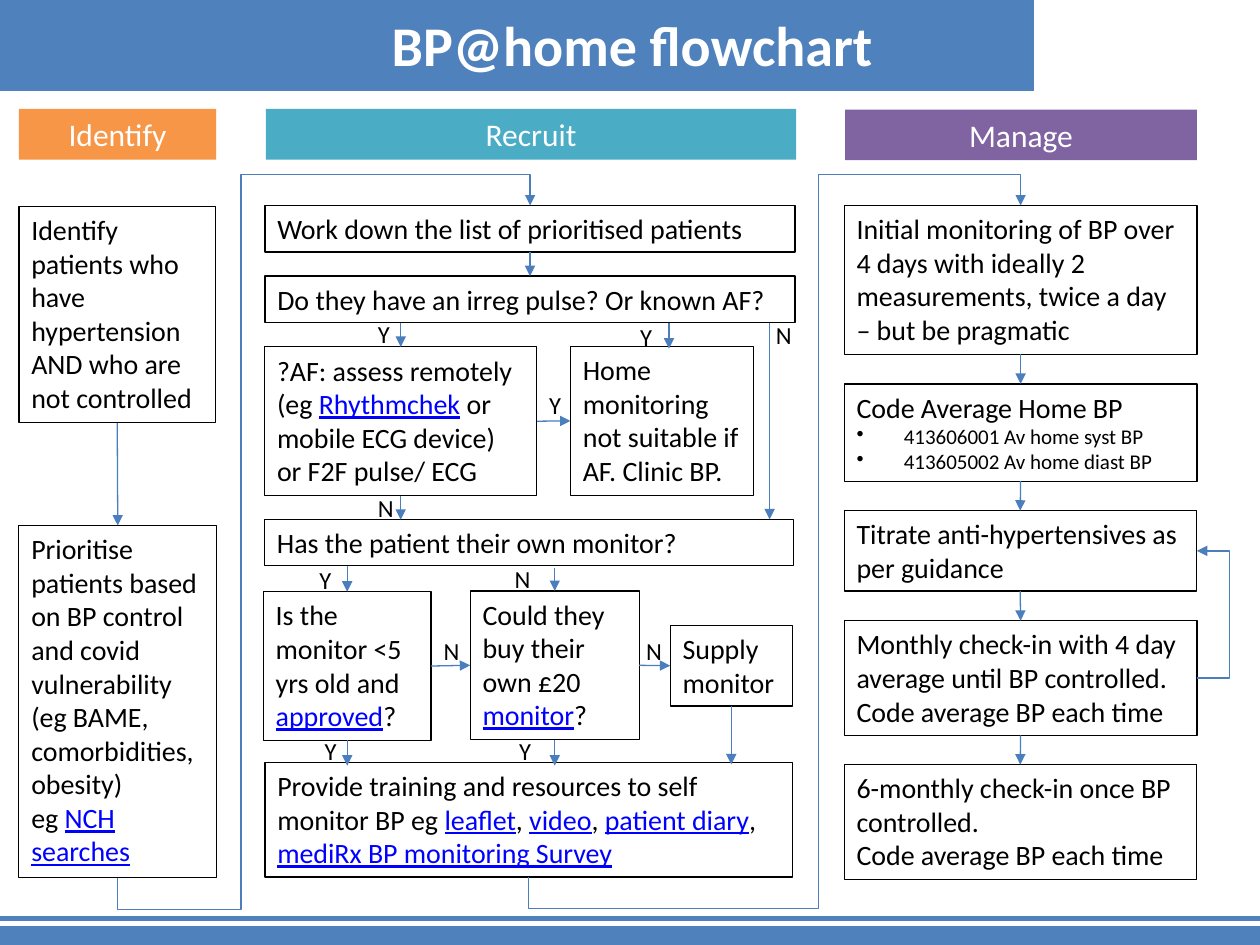
from lxml import etree
from pptx import Presentation
from pptx import util as u
from pptx.dml import color
from pptx.enum import shapes, text
from pptx.oxml import ns

Pt = u.Pt
BLUE, ARROW, BLACK, WHITE, LINK = "4F81BD", "4B7EBC", "000000", "FFFFFF", "0000FF"
rgb = color.RGBColor.from_string


def add_box(place, content, size, ink=BLACK, fill=None, line=None, weight=0.75):
    """Rectangle with text; newlines part paragraphs, and |bars| enclose link words."""
    box = page.shapes.add_shape(shapes.MSO_SHAPE.RECTANGLE, *map(Pt, place))
    box.shadow.inherit = False
    if fill:
        box.fill.solid()
        box.fill.fore_color.rgb = rgb(fill)
    else:
        box.fill.background()
    if line:
        box.line.color.rgb = rgb(line)
        box.line.width = Pt(weight)
    else:
        box.line.fill.background()
    frame = box.text_frame
    frame.word_wrap = True
    frame.vertical_anchor = text.MSO_ANCHOR.TOP
    for number, words in enumerate(content.split("\n")):
        para = frame.add_paragraph() if number else frame.paragraphs[0]
        para.alignment = text.PP_ALIGN.LEFT
        para.font.size = Pt(size)
        para.font.name = "Calibri"
        para.font.color.rgb = rgb(ink)
        for index, part in enumerate(words.split("|")):
            if part:
                span = para.add_run()
                span.text = part
                if index % 2:
                    span.font.color.rgb = rgb(LINK)
                    span.font.underline = True
    return box


def style_line(line, ink=ARROW, weight=0.75, arrow=True):
    line.line.color.rgb = rgb(ink)
    line.line.width = Pt(weight)
    properties = line._element.spPr
    if arrow:
        etree.SubElement(properties.find(ns.qn("a:ln")), ns.qn("a:tailEnd"), type="triangle")
    etree.SubElement(properties, ns.qn("a:effectLst"))


deck = Presentation()
deck.slide_width, deck.slide_height = Pt(720), Pt(540)
page = deck.slides.add_slide(deck.slide_layouts[6])
STRAIGHT = shapes.MSO_CONNECTOR.STRAIGHT

# Banner and footer
rule = page.shapes.add_connector(STRAIGHT, Pt(-1.5), Pt(525), Pt(720), Pt(525))
style_line(rule, BLUE, 3, arrow=False)
for place, fill in [((0, 530, 720, 10), BLUE), ((0, 0, 720, 51), BLUE), ((592, 0, 128, 51.8), WHITE)]:
    add_box(place, "", 16, fill=fill, line=fill, weight=2)
title = add_box((37.4, -0.7, 648, 51.8), "BP@home flowchart", 32, WHITE)
title.text_frame.vertical_anchor = text.MSO_ANCHOR.MIDDLE
title.text_frame.paragraphs[0].alignment = text.PP_ALIGN.CENTER
title.text_frame.paragraphs[0].font.bold = True

# Column headings
for name, left, top, width, fill in [
    ("Identify", 10.8, 62.2, 112.8, "F79646"),
    ("Recruit", 152, 62.2, 303, "4BACC6"),
    ("Manage", 482.9, 62.6, 201, "8064A2"),
]:
    heading = add_box((left, top, width, 29), name, 18, WHITE, fill)
    heading.text_frame.paragraphs[0].alignment = text.PP_ALIGN.CENTER

# Steps: left, top, width, height, wording
steps = {
    "identify": (10.8, 118, 112.4, 123.6,
                 "Identify patients who have hypertension AND who are not controlled"),
    "prioritise": (10.8, 300.3, 113, 201,
                   "Prioritise patients based on BP control and covid vulnerability "
                   "(eg BAME, comorbidities, obesity)\neg |NCH searches|"),
    "list": (151.4, 117.4, 303, 26.6, "Work down the list of prioritised patients"),
    "pulse": (151.4, 157.8, 303, 26.6, "Do they have an irreg pulse? Or known AF?"),
    "assess": (151.2, 198.2, 155.6, 85,
               "?AF: assess remotely (eg |Rhythmchek| or mobile ECG device) or F2F pulse/ ECG"),
    "clinic": (326, 198, 104.6, 85, "Home monitoring not suitable if AF. Clinic BP."),
    "own": (151.2, 296.8, 302.4, 26.6, "Has the patient their own monitor?"),
    "age": (150.5, 338.1, 95.8, 85, "Is the monitor <5 yrs old and |approved|?"),
    "buy": (268.7, 337.7, 96.6, 85, "Could they buy their own £20 |monitor|?"),
    "supply": (383, 357.4, 69.8, 46, "Supply monitor"),
    "train": (151.4, 435.6, 301.6, 65.5,
              "Provide training and resources to self monitor BP eg |leaflet|, |video|, "
              "|patient diary|, |mediRx BP monitoring Survey|"),
    "initial": (482.4, 117.4, 201.6, 85,
                "Initial monitoring of BP over\n"
                "4 days with ideally 2 measurements, twice a day – but be pragmatic"),
    "code": (482.4, 219.4, 201.6, 55.6,
             "Code Average Home BP\n413606001 Av home syst BP\n413605002 Av home diast BP"),
    "titrate": (482.4, 291.8, 201.2, 46, "Titrate anti-hypertensives as per guidance"),
    "monthly": (482.4, 354.7, 201.6, 65.5,
                "Monthly check-in with 4 day average until BP controlled. "
                "Code average BP each time"),
    "half_year": (482.4, 436.9, 201.2, 65.5,
                  "6-monthly check-in once BP controlled.\nCode average BP each time"),
}
boxes = {}
for name, (*place, words) in steps.items():
    boxes[name] = add_box(place, words, 16, line=BLACK)
    boxes[name].text_frame.auto_size = text.MSO_AUTO_SIZE.SHAPE_TO_FIT_TEXT

for para in boxes["code"].text_frame.paragraphs[1:]:
    para.font.size = Pt(12)
    layout = para._p.get_or_add_pPr()
    layout.set("marL", str(Pt(27)))
    layout.set("indent", str(Pt(-27)))
    bullet = etree.Element(ns.qn("a:buChar"), char="•")
    layout.find(ns.qn("a:defRPr")).addprevious(bullet)

# Arrows from the middle of one box to the middle of the next
BOTTOM_TO_TOP, RIGHT_TO_LEFT = (2, 0), (3, 1)
for chain, (leave, arrive) in [
    (("identify", "prioritise"), BOTTOM_TO_TOP),
    (("list", "pulse"), BOTTOM_TO_TOP),
    (("initial", "code", "titrate", "monthly", "half_year"), BOTTOM_TO_TOP),
    (("assess", "clinic"), RIGHT_TO_LEFT),
    (("age", "buy", "supply"), RIGHT_TO_LEFT),
]:
    for start, end in zip(chain, chain[1:]):
        arrow = page.shapes.add_connector(STRAIGHT, 0, 0, 0, 0)
        arrow.begin_connect(boxes[start], leave)
        arrow.end_connect(boxes[end], arrive)
        style_line(arrow)

# Vertical arrows joined to a box at one end at most
for x, top, bottom, above, below in [
    (229, 184.8, 198.2, None, "assess"),
    (382.3, 184.8, 199.2, None, None),
    (439.8, 184.4, 296.8, None, None),
    (229, 283.2, 297, "assess", None),
    (198.4, 323.4, 338.1, None, "age"),
    (317, 324.6, 337.7, None, "buy"),
    (198.4, 423.1, 437.5, "age", None),
    (317, 422.7, 437.5, "buy", None),
    (417.9, 403.4, 436.8, "supply", None),
]:
    arrow = page.shapes.add_connector(STRAIGHT, Pt(x), Pt(top), Pt(x), Pt(bottom))
    if above:
        arrow.begin_connect(boxes[above], 2)
    if below:
        arrow.end_connect(boxes[below], 0)
    style_line(arrow)

# Bent arrows between columns, and the titration loop
for start, *bends in [
    [(67.2, 501.5), (67.2, 519.6), (137.7, 519.6), (137.7, 99.6), (302.9, 99.6), (302.9, 117.4)],
    [(302.2, 501.2), (302.2, 519.2), (467.7, 519.2), (467.7, 99.6), (583.2, 99.6), (583.2, 117.4)],
    [(684, 387.4), (702.7, 387.4), (702.7, 314.8), (684, 314.8)],
]:
    builder = page.shapes.build_freeform(*map(Pt, start))
    builder.add_line_segments([(Pt(x), Pt(y)) for x, y in bends], close=False)
    route = builder.convert_to_shape()
    route.fill.background()
    style_line(route)

# Yes and no labels
for letter, corners in {
    "Y": [(208.8, 178.9), (358.7, 180.2), (306.7, 219.4), (175.5, 319.5), (178.4, 416.8), (289.6, 417)],
    "N": [(436.3, 179.5), (208.8, 278), (287, 318.6), (246.4, 360), (362.2, 360)],
}.items():
    for left, top in corners:
        label = add_box((left, top, 14.4, 24.2), letter, 14)
        label.text_frame.margin_right = 0

deck.save("out.pptx")
